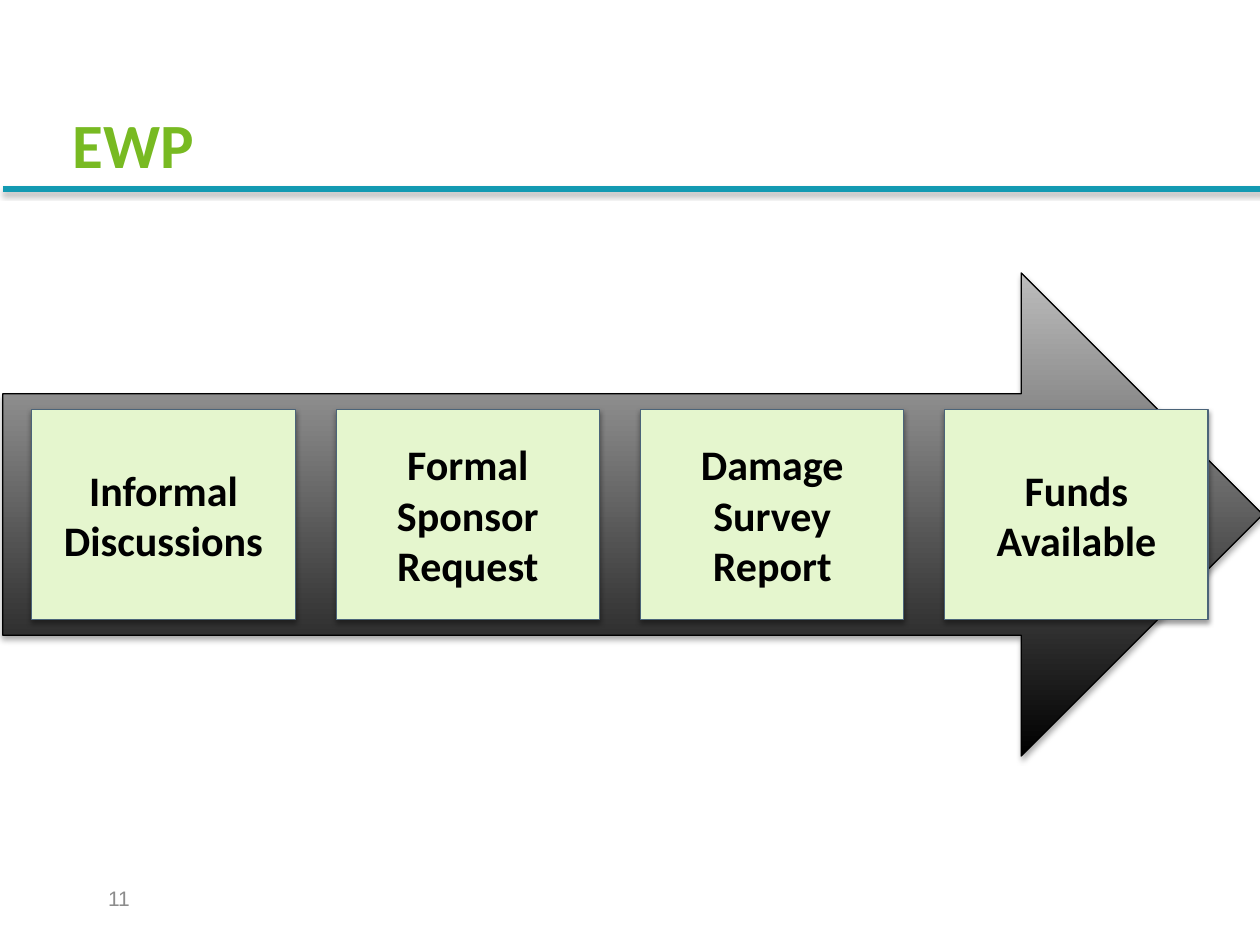
from lxml import etree
from pptx import Presentation
from pptx.dml.color import RGBColor
from pptx.enum.shapes import MSO_CONNECTOR, MSO_SHAPE
from pptx.enum.text import MSO_ANCHOR, MSO_AUTO_SIZE, PP_ALIGN
from pptx.oxml import parse_xml
from pptx.oxml.ns import nsdecls
from pptx.util import Pt

RECTANGLE, RIGHT_ARROW = MSO_SHAPE.RECTANGLE, MSO_SHAPE.RIGHT_ARROW
STRAIGHT = MSO_CONNECTOR.STRAIGHT
MIDDLE = MSO_ANCHOR.MIDDLE
LEFT, CENTER = PP_ALIGN.LEFT, PP_ALIGN.CENTER
NO_AUTOFIT = MSO_AUTO_SIZE.NONE
TITLE_ONLY = 5
STEPS = ["Informal Discussions", "Formal Sponsor Request",
         "Damage Survey Report", "Funds Available"]


def color(value):
    return RGBColor.from_string(value)


def set_line(line, value, width):
    line.color.rgb = color(value)
    line.width = Pt(width)


def add_shadow(shape, opacity, distance):
    effects = parse_xml(f"<a:effectLst {nsdecls('a')}/>")
    shadow = etree.SubElement(
        effects, effects.tag.replace("effectLst", "outerShdw"),
        blurRad=str(Pt(3.1)), dist=str(Pt(distance)), dir="5400000", rotWithShape="0")
    black = etree.SubElement(
        shadow, effects.tag.replace("effectLst", "srgbClr"), val="000000")
    etree.SubElement(
        black, effects.tag.replace("effectLst", "alpha"), val=str(opacity * 1000))
    shape._element.spPr.append(effects)


def write_text(shape, text, font, size, value, bold=False, align=LEFT):
    text_frame = shape.text_frame
    text_frame.text = text
    text_frame.word_wrap = True
    text_frame.auto_size = NO_AUTOFIT
    text_frame.vertical_anchor = MIDDLE
    paragraph = text_frame.paragraphs[0]
    paragraph.alignment = align
    run_font = paragraph.runs[0].font
    run_font.name = font
    run_font.size = Pt(size)
    run_font.bold = bold
    run_font.color.rgb = color(value)


def place_title(slide, left, top, width, height):
    title = slide.shapes.title
    title.left, title.top = Pt(left), Pt(top)
    title.width, title.height = Pt(width), Pt(height)
    write_text(title, "EWP", "Calibri", 36, "78BA22", bold=True)
    title.text_frame.margin_left = Pt(40)

    rule_top = top + 63.4
    rule = slide.shapes.add_connector(
        STRAIGHT, Pt(left), Pt(rule_top), Pt(left + 720), Pt(rule_top))
    set_line(rule.line, "139AB2", 3)
    add_shadow(rule, 35, 1.8)


def add_arrow(slide, left, top, width, height):
    arrow = slide.shapes.add_shape(RIGHT_ARROW, Pt(left), Pt(top), Pt(width), Pt(height))
    arrow.fill.gradient()
    arrow.fill.gradient_angle = 90
    for stop, value in zip(arrow.fill.gradient_stops, ("000000", "BDBDBD")):
        stop.color.rgb = color(value)
    arrow.fill.gradient_stops[0].position = 0
    arrow.fill.gradient_stops[1].position = 1
    set_line(arrow.line, "000000", 0.75)
    add_shadow(arrow, 35, 1.8)


def add_steps(slide, left, top, width, height, gap):
    step_width = (width - gap * (len(STEPS) - 1)) / len(STEPS)
    group = slide.shapes.add_group_shape()
    for index, label in enumerate(STEPS):
        step = group.shapes.add_shape(
            RECTANGLE, Pt(left + index * (step_width + gap)), Pt(top),
            Pt(step_width), Pt(height))
        step.fill.solid()
        step.fill.fore_color.rgb = color("E5F6CE")
        set_line(step.line, "4B6479", 0.75)
        add_shadow(step, 38, 1.6)
        write_text(step, label, "Calibri", 24, "000000", bold=True, align=CENTER)


def add_slide_number(slide, left, top, width, height):
    number = slide.shapes.add_textbox(Pt(left), Pt(top), Pt(width), Pt(height))
    write_text(number, "11", "Arial", 12, "8C8C8C")


def main():
    presentation = Presentation()
    presentation.slide_width, presentation.slide_height = Pt(720), Pt(540)
    slide = presentation.slides.add_slide(presentation.slide_layouts[TITLE_ONLY])
    add_slide_number(slide, 54.7, 499, 168, 28.8)
    place_title(slide, 1.6, 44.6, 716.4, 74.2)
    add_arrow(slide, 1.6, 156, 720, 276)
    add_steps(slide, 18.2, 234, 672.2, 120, 23.4)
    presentation.save("out.pptx")


if __name__ == "__main__":
    main()
